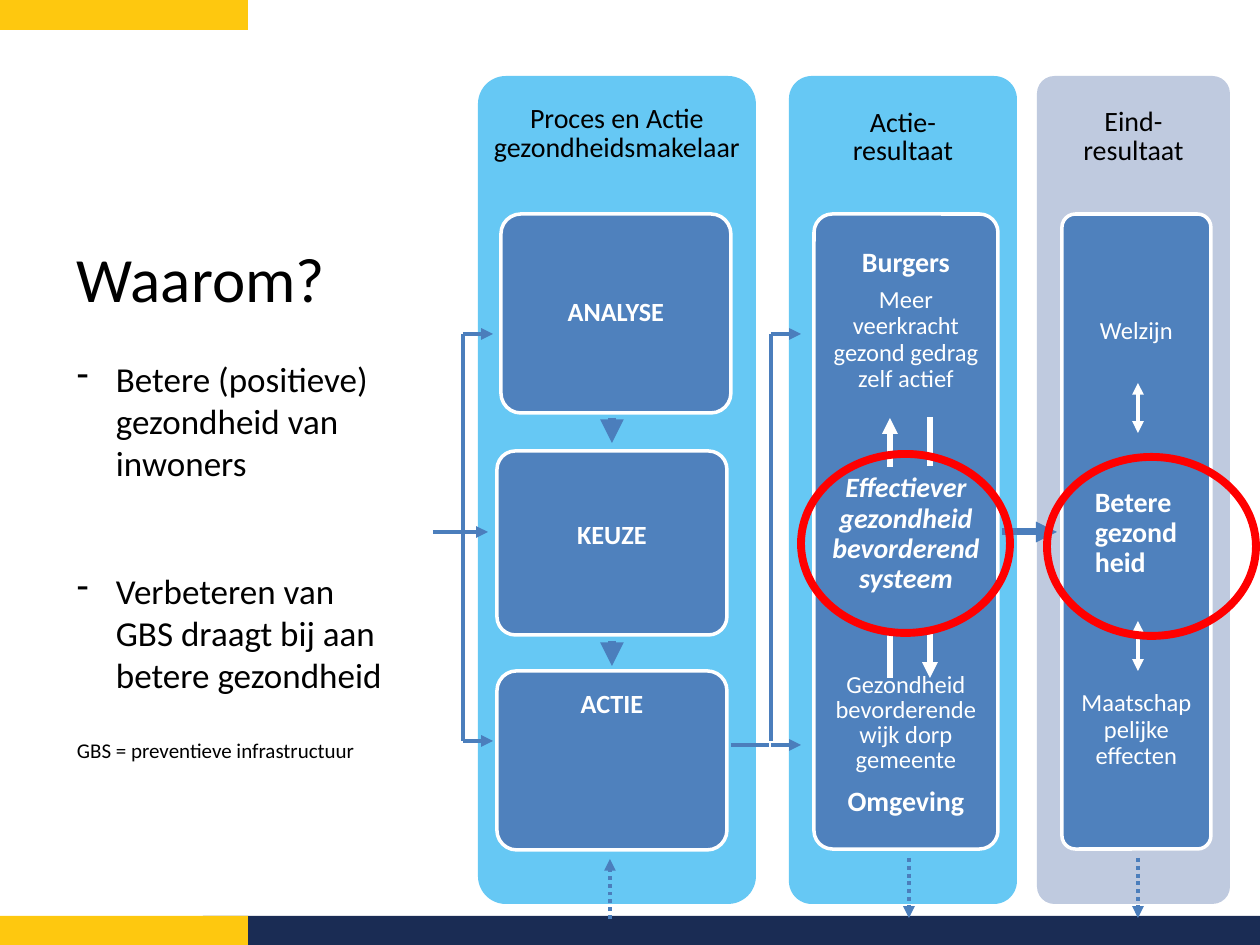
from pptx import Presentation
from pptx import util as u
from pptx.dml.color import RGBColor
from pptx.enum import dml, shapes, text
from pptx.oxml.ns import qn
from lxml import etree

COLORS = {"yellow": "FEC80F", "navy": "1A2C54", "sky": "66C8F4", "grey": "BFCADF",
          "blue": "4F81BD", "arrow": "4B7EBC", "red": "FF0000",
          "white": "FFFFFF", "black": "000000"}
SCALE = 914400 // 126


def px(n):
    return u.Emu(n * SCALE)


def rgb(name):
    return RGBColor.from_string(COLORS[name])


def para(words, size=14, **style):
    return {"words": words, "size": size, **style}


class Diagram:
    font = "Calibri"

    def __init__(self, slide):
        self.slide = slide

    def shape(self, kind, x, y, w, h, fill=None, line=None, width=2):
        item = self.slide.shapes.add_shape(kind, px(x), px(y), px(w), px(h))
        item.shadow.inherit = False
        if fill:
            item.fill.solid()
            item.fill.fore_color.rgb = rgb(fill)
        else:
            item.fill.background()
        if line:
            item.line.color.rgb = rgb(line)
            item.line.width = u.Pt(width)
        else:
            item.line.fill.background()
        return item

    def bar(self, x, y, w, h, fill):
        self.shape(shapes.MSO_SHAPE.RECTANGLE, x, y, w, h, fill)

    def ring(self, x, y, w, h):
        self.shape(shapes.MSO_SHAPE.OVAL, x, y, w, h, None, "red", 4.5)

    def panel(self, x, y, w, h, radius, fill, paragraphs, top, bottom=9, line=None,
              color="white", anchor=text.MSO_ANCHOR.TOP):
        """Rounded box; top and bottom are text distances from its edges."""
        item = self.shape(shapes.MSO_SHAPE.ROUNDED_RECTANGLE, x, y, w, h, fill, line)
        item.adjustments[0] = round(radius / min(w, h), 2)
        corner = round(radius * 0.29)  # a rounded box already insets its text
        side = 9 - corner
        self.add_text(item.text_frame, paragraphs, color, text.PP_ALIGN.CENTER,
                      (side, top - corner, side, bottom - corner), anchor)

    def textbox(self, x, y, w, h, paragraphs):
        item = self.slide.shapes.add_textbox(px(x), px(y), px(w), px(h))
        self.add_text(item.text_frame, paragraphs, "black", text.PP_ALIGN.LEFT,
                      (13, 6, 13, 6))

    def add_text(self, frame, paragraphs, color, align, insets, anchor=text.MSO_ANCHOR.TOP):
        frame.word_wrap = True
        frame.vertical_anchor = anchor
        (frame.margin_left, frame.margin_top,
         frame.margin_right, frame.margin_bottom) = map(px, insets)
        for i, spec in enumerate(paragraphs):
            p = frame.paragraphs[0] if i == 0 else frame.add_paragraph()
            p.alignment = spec.get("align", align)
            p.line_spacing = spec.get("spacing", 0.9)
            p.space_before = u.Pt(spec.get("before", 0))
            p.space_after = u.Pt(0)
            props = p._p.get_or_add_pPr()
            if "indent" in spec:
                props.set("marL", str(px(spec["indent"])))
            if "bullet" in spec:
                props.set("indent", str(-px(spec["indent"])))
                etree.SubElement(props, qn("a:buChar")).set("char", spec["bullet"])
            for words in spec["words"]:
                run = p.add_run()
                run.text = words
                run.font.name = self.font
                run.font.size = u.Pt(spec["size"])
                run.font.bold = spec.get("bold", False)
                run.font.italic = spec.get("italic", False)
                run.font.color.rgb = rgb(color)

    def line(self, x1, y1, x2, y2, color="arrow", width=2.25, ends="", dotted=False):
        """Straight line; ends names its arrowheads: head (start), tail (finish)."""
        item = self.slide.shapes.add_connector(
            shapes.MSO_CONNECTOR.STRAIGHT, px(x1), px(y1), px(x2), px(y2))
        item.line.color.rgb = rgb(color)
        item.line.width = u.Pt(width)
        if dotted:
            item.line.dash_style = dml.MSO_LINE.ROUND_DOT
        for end in ends.split():
            etree.SubElement(item.line._ln, qn(f"a:{end}End")).set("type", "triangle")
        etree.SubElement(item._element.spPr, qn("a:effectLst"))


def main():
    deck = Presentation()
    deck.slide_width, deck.slide_height = px(1260), px(945)
    d = Diagram(deck.slides.add_slide(deck.slide_layouts[6]))

    d.bar(0, 0, 248, 30, "yellow")
    d.bar(203, 916, 1057, 29, "navy")
    d.bar(0, 916, 248, 29, "yellow")

    # Columns with their headings, one list of runs per paragraph
    columns = [(478, 278, 28, "sky", 30, [["Proces en Actie", " gezondheidsmakelaar"]]),
               (789, 228, 22, "sky", 33, [["Actie-"], ["resultaat"]]),
               (1037, 193, 17, "grey", 33, [["Eind-"], ["resultaat"]])]
    for x, w, radius, fill, top, heading in columns:
        d.panel(x, 76, w, 828, radius, fill,
                [para(words, 16, spacing=0.85) for words in heading], top, color="black")

    # Process steps
    middle, upper = text.MSO_ANCHOR.MIDDLE, text.MSO_ANCHOR.TOP
    steps = [("ANALYSE", 501, 214, 199, 9, 9, middle),
             ("KEUZE", 497, 451, 184, 9, 23, middle),
             ("ACTIE", 497, 671, 179, 20, 9, upper)]
    for name, x, y, h, top, bottom, anchor in steps:
        d.panel(x, y, 230, h, 19, "blue", [para([name], 15, bold=True)],
                top, bottom, "white", anchor=anchor)

    # End result
    d.panel(1062, 214, 149, 635, 14, "blue", [
        para(["Welzijn"]),
        para(["Betere gezond heid"], 16, bold=True, before=82, indent=24,
             align=text.PP_ALIGN.LEFT),
        para(["Maatschap pelijke effecten"], before=64),
    ], 104, line="white")

    # Flow between the columns
    for y1, y2 in [(418, 443), (641, 666)]:
        d.line(612, y1, 612, y2, width=4.5, ends="tail")
    d.line(731, 745, 769, 745)
    for x, bottom in [(771, 745), (463, 741)]:
        d.line(x, 741, x, 334)
        for y in (334, bottom):
            d.line(x, y, x + 30, y, ends="tail")
    d.line(433, 532, 488, 532, ends="tail")
    for x in (909, 1138):
        d.line(x, 858, x, 918, ends="tail", dotted=True)

    # Action result
    d.panel(814, 214, 184, 635, 19, "blue", [
        para(["Burgers"], 16, bold=True),
        para(["Meer"], before=5),
        para(["veerkracht gezond gedrag zelf actief"]),
        para(["Effectiever gezondheid bevorderend systeem"], 16, bold=True, italic=True,
             before=46),
        para(["Gezondheid bevorderende wijk dorp gemeente"], before=45, spacing=0.85),
        para(["Omgeving"], 16, bold=True, before=8),
    ], 35, line="white")

    # Interaction inside the results
    for y in (383, 621):
        d.line(1138, y, 1138, y + 50, "white", ends="head tail")
    d.line(890, 629, 890, 678, "white", 3)
    d.line(930, 417, 930, 466, "white", 3)
    d.line(890, 418, 890, 467, "white", 3, "head")
    d.line(930, 678, 930, 629, "white", 3, "head")
    d.line(610, 919, 610, 859, ends="tail", dotted=True)
    d.line(1002, 532, 1057, 532, width=4, ends="tail")

    d.textbox(64, 234, 338, 653, [
        para(["Waarom?"], 36, spacing=1.0),
        para(["Betere (positieve) gezondheid van inwoners"], 20, spacing=1.0,
             before=24, indent=39, bullet="-"),
        para(["Verbeteren van GBS draagt bij aan betere gezondheid"], 20, spacing=1.0,
             before=49, indent=39, bullet="-"),
        para(["GBS = preventieve infrastructuur"], 12, spacing=1.0, before=24),
    ])

    for x, y in [(1047, 457), (801, 454)]:
        d.ring(x, y, 209, 179)

    deck.save("out.pptx")


if __name__ == "__main__":
    main()
